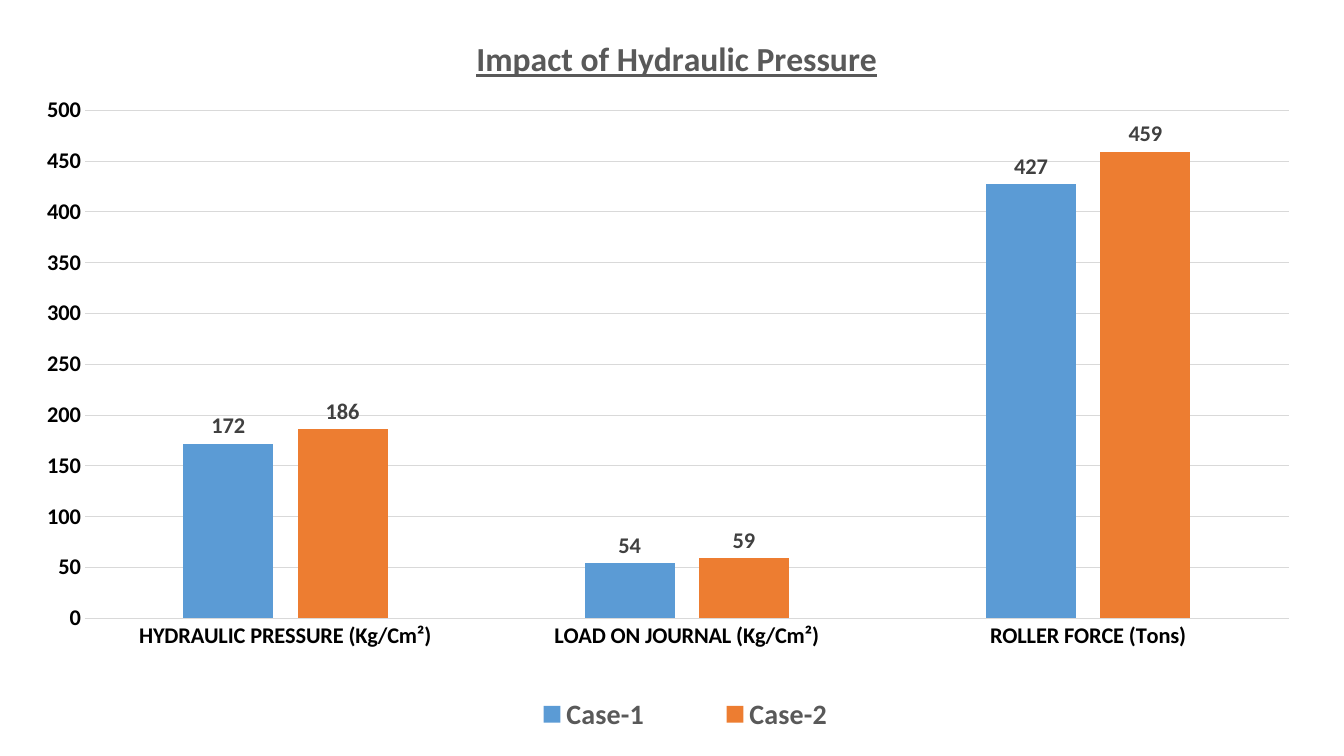
from lxml import etree
from pptx import Presentation
from pptx.chart.data import CategoryChartData
from pptx.dml.color import RGBColor
from pptx.enum.chart import XL_CHART_TYPE, XL_LABEL_POSITION, XL_LEGEND_POSITION, XL_TICK_MARK
from pptx.oxml.ns import qn
from pptx.util import Cm, Pt

COLUMNS = XL_CHART_TYPE.COLUMN_CLUSTERED
ABOVE_BAR = XL_LABEL_POSITION.OUTSIDE_END
BOTTOM = XL_LEGEND_POSITION.BOTTOM
NO_TICK = XL_TICK_MARK.NONE

WIDTH, HEIGHT = Cm(33.87), Cm(19.05)
FONT = "Calibri"
COLORS = {
    "axis": "000000",
    "heading": "595959",
    "label": "404040",
    "grid": "D9D9D9",
    "Case-1": "5B9BD5",
    "Case-2": "ED7D31",
}
CATEGORIES = ["HYDRAULIC PRESSURE (Kg/Cm²)", "LOAD ON JOURNAL (Kg/Cm²)", "ROLLER FORCE (Tons)"]
CASES = {"Case-1": (172, 54, 427), "Case-2": (186, 59, 459)}


class PressureSlide:
    """Holds the slide and the style of its chart."""

    def __init__(self, slide):
        self.slide = slide

    def color(self, name):
        return RGBColor.from_string(COLORS[name])

    def style(self, font, size, color, bold=True):
        font.name, font.size, font.bold = FONT, Pt(size), bold
        font.color.rgb = self.color(color)

    def line(self, line_format):
        line_format.color.rgb = self.color("grid")
        line_format.width = Pt(0.75)

    def place(self, part, after=None, inner=False, **fractions):
        """Give a chart part a manual layout in fractions of the chart."""
        for old in part.findall(qn("c:layout")):
            part.remove(old)
        layout = etree.Element(qn("c:layout"))
        manual = etree.SubElement(layout, qn("c:manualLayout"))
        settings = {"layoutTarget": "inner"} if inner else {}
        settings.update(xMode="edge", yMode="edge", **fractions)
        for name, value in settings.items():
            etree.SubElement(manual, qn(f"c:{name}")).set("val", str(value))
        part.insert(0 if after is None else part.index(part.find(qn(after))) + 1, layout)

    def column_chart(self):
        data = CategoryChartData(number_format="0")
        data.categories = CATEGORIES
        for case, values in CASES.items():
            data.add_series(case, values)
        chart = self.slide.shapes.add_chart(COLUMNS, 0, 0, WIDTH, HEIGHT, data).chart
        self.style(chart.font, 10, "axis", bold=False)
        plot = chart.plots[0]
        plot.gap_width, plot.overlap = 219, -27
        plot.vary_by_categories = False
        for series in plot.series:
            series.format.fill.solid()
            series.format.fill.fore_color.rgb = self.color(series.name)
            labels = series.data_labels
            labels.show_value = True
            labels.position = ABOVE_BAR
            labels.number_format, labels.number_format_is_linked = "0", False
            self.style(labels.font, 16, "label")
        self.place(chart.element.find(".//" + qn("c:plotArea")), inner=True,
                   x=0.063, y=0.146, w=0.896, h=0.672)
        return chart

    def axes(self, chart):
        for axis in (chart.category_axis, chart.value_axis):
            axis.major_tick_mark = axis.minor_tick_mark = NO_TICK
            self.style(axis.tick_labels.font, 16, "axis")
        self.line(chart.category_axis.format.line)
        values = chart.value_axis
        values.minimum_scale, values.maximum_scale, values.major_unit = 0, 500, 50
        values.format.line.fill.background()
        self.line(values.major_gridlines.format.line)
        values.tick_labels.number_format = "0"
        values.tick_labels.number_format_is_linked = False

    def title(self, chart, text):
        chart.has_title = True
        paragraph = chart.chart_title.text_frame.paragraphs[0]
        paragraph.text = text
        font = paragraph.runs[0].font
        self.style(font, 24, "heading")
        font.underline = True
        chart.chart_title.include_in_layout = False
        self.place(chart.element.find(".//" + qn("c:title")), after="c:tx", x=0.35, y=0.04)

    def legend(self, chart):
        chart.has_legend = True
        chart.legend.position = BOTTOM
        chart.legend.include_in_layout = False
        self.style(chart.legend.font, 20, "heading")
        self.place(chart.element.find(".//" + qn("c:legend")), after="c:legendPos",
                   x=0.35, y=0.91, w=0.32, h=0.07)


def main():
    prs = Presentation()
    prs.slide_width, prs.slide_height = WIDTH, HEIGHT
    page = PressureSlide(prs.slides.add_slide(prs.slide_layouts[6]))

    # Columns for both cases
    chart = page.column_chart()
    page.axes(chart)

    # Heading and key
    page.title(chart, "Impact of Hydraulic Pressure")
    page.legend(chart)

    prs.save("out.pptx")


if __name__ == "__main__":
    main()
